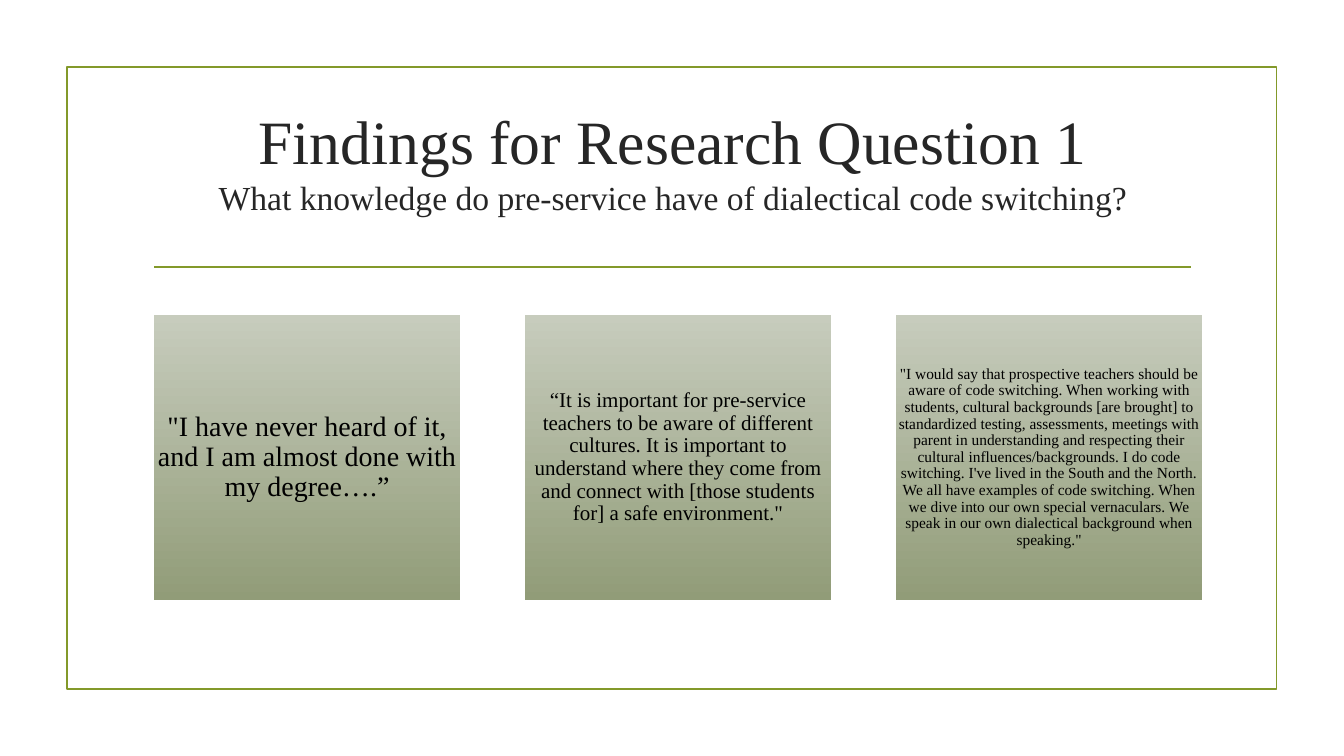
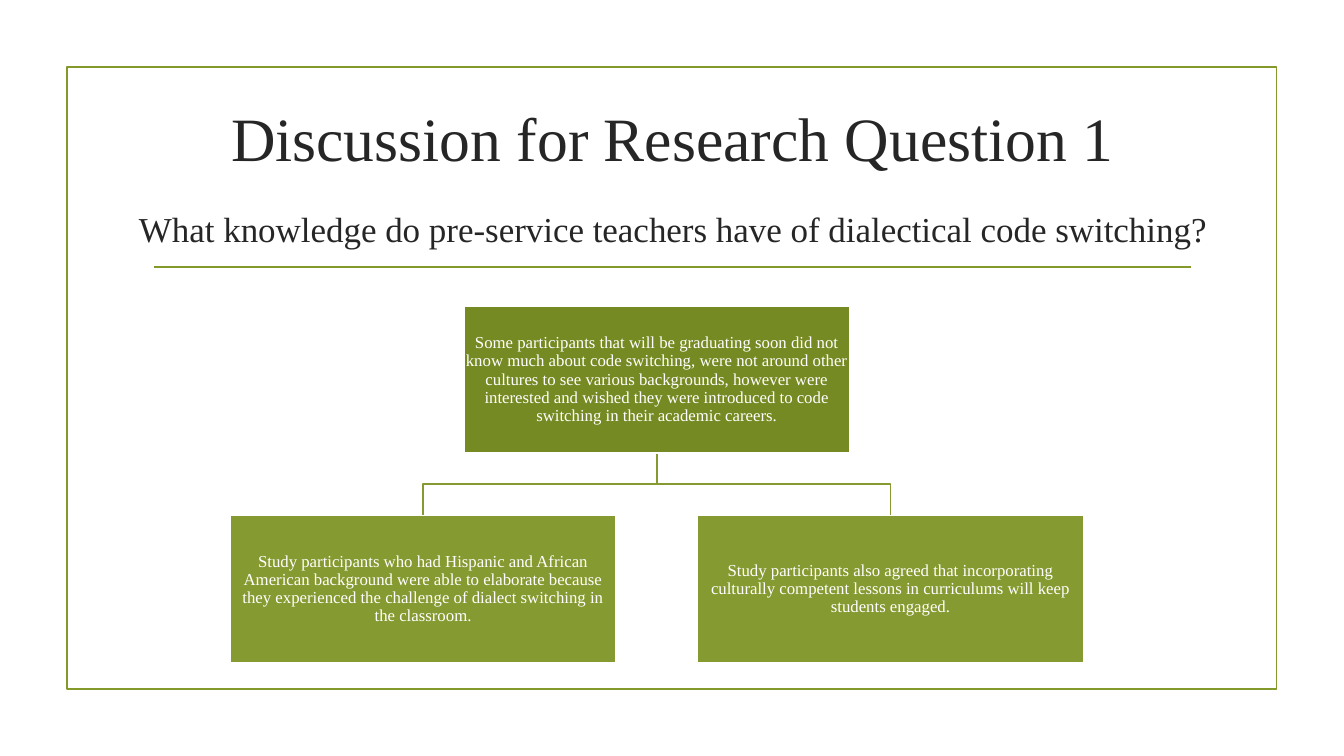
from dataclasses import dataclass
from typing import Any

import pptx
import pptx.dml.color
import pptx.enum.shapes
import pptx.enum.text
import pptx.oxml.ns
import pptx.util
from lxml import etree

Cm = pptx.util.Cm
Pt = pptx.util.Pt

COLOURS = {
    "frame": "83992A",
    "title": "262626",
    "quote": "000000",
    "quote_top": "C7CCBD",
    "quote_bottom": "919C78",
    "root": "758A22",
    "branch": "859A30",
    "white": "FFFFFF",
}
FONT = "Times New Roman"
LINE_WIDTH = Pt(1.25)
MIDDLE = pptx.enum.text.MSO_ANCHOR.MIDDLE
TOP = pptx.enum.text.MSO_ANCHOR.TOP
CENTER = pptx.enum.text.PP_ALIGN.CENTER


@dataclass(frozen=True)
class Area:
    left: float
    top: float
    width: float
    height: float

    @property
    def middle(self) -> float:
        return self.left + self.width / 2

    @property
    def bottom(self) -> float:
        return self.top + self.height

    def lengths(self) -> list[int]:
        return [Cm(self.left), Cm(self.top), Cm(self.width), Cm(self.height)]


@dataclass(frozen=True)
class Line:
    text: str
    size: float
    before: float = 0


@dataclass(frozen=True)
class Heading:
    top: float
    lines: tuple[Line, ...]


FRAME = Area(1.69, 1.69, 30.48, 15.68)
RULE_LEFT, RULE_RIGHT, RULE_TOP = 3.89, 30.02, 6.73

FINDINGS = Heading(2.46, (
    Line("Findings for Research Question 1", 44),
    Line("What knowledge do pre-service have of dialectical code switching?", 24),
))
DISCUSSION = Heading(2.39, (
    Line("Discussion for Research Question 1", 44),
    Line("What knowledge do pre-service teachers have of dialectical code switching?", 25, 24),
))

QUOTE_AREA = Area(3.88, 7.93, 7.72, 7.19)
QUOTE_STEP = 9.35
QUOTES = (
    Line('"I have never heard of it, and I am almost done with my degree….”', 20),
    Line("“It is important for pre-service teachers to be aware of different cultures. "
         "It is important to understand where they come from and connect with "
         '[those students for] a safe environment."', 15),
    Line('"I would say that prospective teachers should be aware of code switching. '
         "When working with students, cultural backgrounds [are brought] to standardized "
         "testing, assessments, meetings with parent in understanding and respecting their "
         "cultural influences/backgrounds. I do code switching. I've lived in the South and "
         "the North. We all have examples of code switching. When we dive into our own "
         'special vernaculars. We speak in our own dialectical background when speaking."', 11),
)

ROOT_AREA = Area(11.69, 7.71, 9.73, 3.71)
BRANCH_TOP = 12.99
BRANCH_STEP = 11.78
ROOT = Line(
    "Some participants that will be graduating soon did not know much about code switching, "
    "were not around other cultures to see various backgrounds, however were interested and "
    "wished they were introduced to code switching in their academic careers.", 12)
BRANCHES = (
    Line("Study participants who had Hispanic and African American background were able to "
         "elaborate because they experienced the challenge of dialect switching in the "
         "classroom.", 12),
    Line("Study participants also agreed that incorporating culturally competent lessons in "
         "curriculums will keep students engaged.", 12),
)


def rgb(name: str) -> pptx.dml.color.RGBColor:
    return pptx.dml.color.RGBColor.from_string(COLOURS[name])


def apply_format(target: Any, values: dict[str, Any]) -> None:
    for name, value in values.items():
        setattr(target, name, value)


def set_outline(shape: Any, colour: str) -> None:
    shape.line.color.rgb = rgb(colour)
    shape.line.width = LINE_WIDTH


def write_text(box: Any, lines: tuple[Line, ...], colour: str, anchor: Any,
               inset: tuple[float, float], spacing: float) -> None:
    frame = box.text_frame
    across, down = map(Cm, inset)
    apply_format(frame, {
        "word_wrap": True, "vertical_anchor": anchor,
        "margin_left": across, "margin_right": across,
        "margin_top": down, "margin_bottom": down,
    })
    for index, line in enumerate(lines):
        para = frame.add_paragraph() if index else frame.paragraphs[0]
        apply_format(para, {"alignment": CENTER, "line_spacing": spacing})
        if line.before:
            para.space_before = Pt(line.before)
        span = para.add_run()
        span.text = line.text
        apply_format(span.font, {"name": FONT, "size": Pt(line.size)})
        span.font.color.rgb = rgb(colour)


def add_rectangle(page: Any, area: Area, outline: str | None = None) -> Any:
    box = page.shapes.add_shape(pptx.enum.shapes.MSO_SHAPE.RECTANGLE, *area.lengths())
    box.shadow.inherit = False
    if outline:
        set_outline(box, outline)
    else:
        box.line.fill.background()
    return box


def add_rule(page: Any) -> None:
    rule = page.shapes.add_connector(
        pptx.enum.shapes.MSO_CONNECTOR.STRAIGHT,
        *map(Cm, (RULE_LEFT, RULE_TOP, RULE_RIGHT, RULE_TOP)))
    set_outline(rule, "frame")
    etree.SubElement(rule._element.spPr, pptx.oxml.ns.qn("a:effectLst"))


def add_page(deck: Any, heading: Heading) -> Any:
    page = deck.slides.add_slide(deck.slide_layouts[6])
    add_rectangle(page, FRAME, "frame").fill.background()
    add_rule(page)
    title = page.shapes.add_textbox(*Area(1.62, heading.top, 30.68, 3.66).lengths())
    write_text(title, heading.lines, "title", TOP, (0.25, 0.13), 1.0)
    return page


def add_quote(page: Any, column: int, quote: Line) -> None:
    area = Area(QUOTE_AREA.left + column * QUOTE_STEP, QUOTE_AREA.top,
                QUOTE_AREA.width, QUOTE_AREA.height)
    box = add_rectangle(page, area)
    box.fill.gradient()
    box.fill.gradient_angle = 270
    for stop, colour in zip(box.fill.gradient_stops, ("quote_top", "quote_bottom")):
        stop.color.rgb = rgb(colour)
    write_text(box, (quote,), "quote", MIDDLE, (0, 0), 0.9)


def add_node(page: Any, area: Area, line: Line, colour: str) -> None:
    box = add_rectangle(page, area, "white")
    box.fill.solid()
    box.fill.fore_color.rgb = rgb(colour)
    write_text(box, (line,), "white", MIDDLE, (0.03, 0.03), 0.9)


def add_elbow(page: Any, parent: Area, child: Area) -> None:
    bend = (parent.bottom + child.top) / 2
    builder = page.shapes.build_freeform(Cm(parent.middle), Cm(parent.bottom))
    corners = ((parent.middle, bend), (child.middle, bend), (child.middle, child.top))
    builder.add_line_segments([(Cm(x), Cm(y)) for x, y in corners], close=False)
    elbow = builder.convert_to_shape()
    elbow.shadow.inherit = False
    elbow.fill.background()
    set_outline(elbow, "branch")


def add_tree(page: Any) -> None:
    first_left = ROOT_AREA.left - BRANCH_STEP * (len(BRANCHES) - 1) / 2
    areas = [Area(first_left + index * BRANCH_STEP, BRANCH_TOP,
                  ROOT_AREA.width, ROOT_AREA.height) for index in range(len(BRANCHES))]
    for area in reversed(areas):
        add_elbow(page, ROOT_AREA, area)
    add_node(page, ROOT_AREA, ROOT, "root")
    for area, line in zip(areas, BRANCHES):
        add_node(page, area, line, "branch")


def main() -> None:
    deck = pptx.Presentation()
    apply_format(deck, {"slide_width": Cm(33.87), "slide_height": Cm(19.05)})
    findings = add_page(deck, FINDINGS)
    for column, quote in enumerate(QUOTES):
        add_quote(findings, column, quote)
    add_tree(add_page(deck, DISCUSSION))
    deck.save("out.pptx")


if __name__ == "__main__":
    main()
